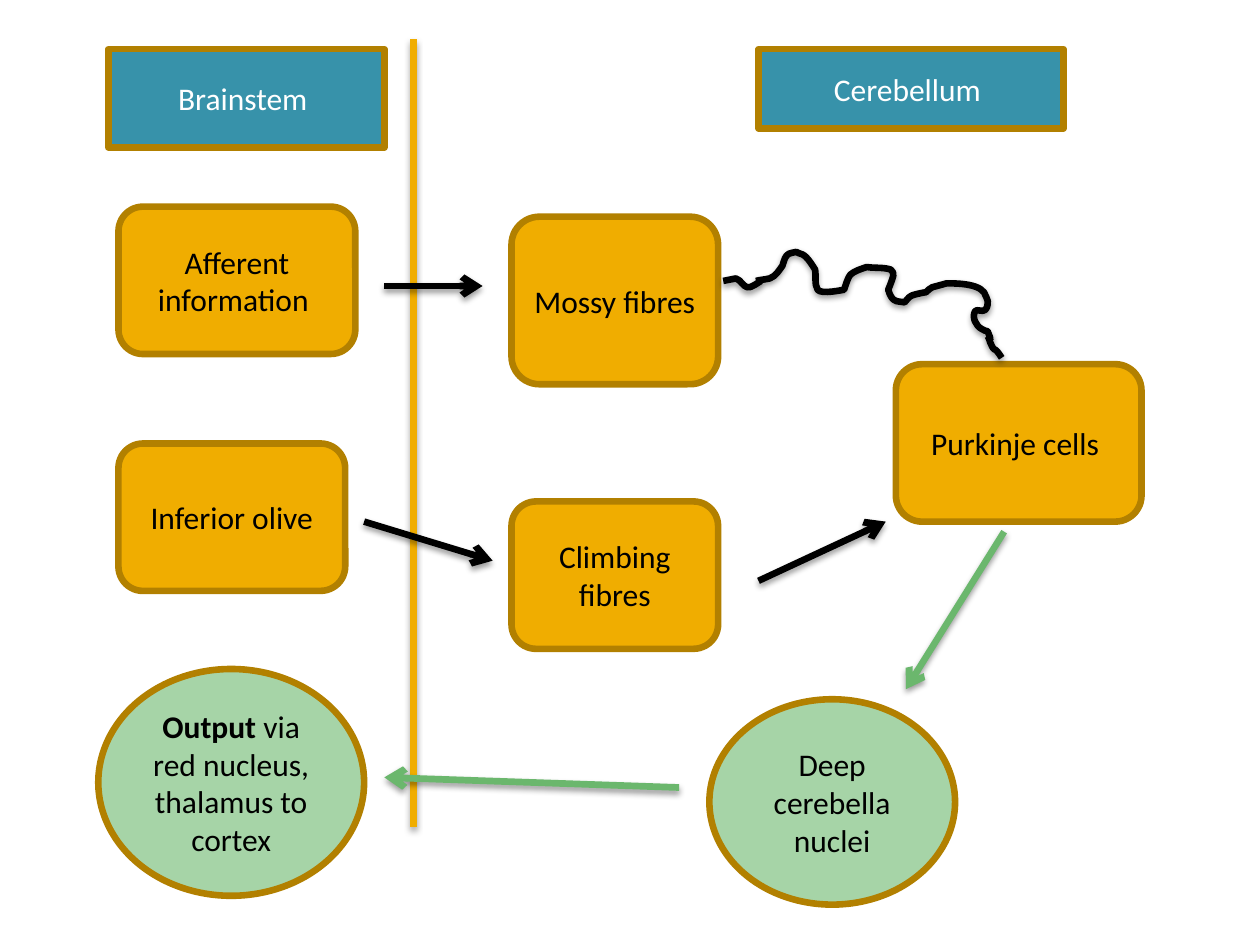
from lxml import etree
from pptx import Presentation
from pptx.dml.color import RGBColor
from pptx.enum.shapes import MSO_CONNECTOR, MSO_SHAPE
from pptx.enum.text import MSO_ANCHOR, PP_ALIGN
from pptx.oxml.ns import qn
from pptx.util import Inches, Pt

RECTANGLE = MSO_SHAPE.RECTANGLE
ROUNDED = MSO_SHAPE.ROUNDED_RECTANGLE
OVAL = MSO_SHAPE.OVAL
STRAIGHT = MSO_CONNECTOR.STRAIGHT
CENTER = PP_ALIGN.CENTER
MIDDLE = MSO_ANCHOR.MIDDLE

COLORS = {
    "amber": "F0AD00",
    "border": "B28000",
    "teal": "3792AA",
    "mint": "A6D4A7",
    "green": "6BB76D",
    "black": "000000",
    "white": "FFFFFF",
}
FONT = "Calibri"
LINE_WIDTH = 3.78

HEADERS = [
    ("Brainstem ", (0.86, 0.39, 2.19, 0.78)),
    ("Cerebellum ", (6.02, 0.39, 2.42, 0.63)),
]
CELLS = [
    ("Afferent information ", (0.94, 1.64, 1.88, 1.17)),
    ("Mossy fibres", (4.06, 1.72, 1.64, 1.33)),
    ("Climbing fibres", (4.06, 3.98, 1.64, 1.17)),
    ("Purkinje cells ", (7.11, 2.89, 1.95, 1.25)),
    ("Inferior olive", (0.94, 3.52, 1.8, 1.17)),
]
MOSSY_ARROW = ((3.05, 2.27), (3.83, 2.27))
CLIMBING_ARROWS = [
    ((2.89, 4.14), (3.91, 4.45)),
    ((6.02, 4.61), (7.03, 4.14)),
]
MOSSY_FIBRE_CURVES = [
    [(6, 2.23),
     (6.04, 2.22), (6.07, 2.22), (6.11, 2.21), (6.16, 2.19), (6.18, 2.15), (6.21, 2.11),
     (6.22, 2.09), (6.22, 2.07), (6.23, 2.05), (6.25, 2.01), (6.27, 2.01), (6.32, 2),
     (6.33, 2.01), (6.35, 2.01), (6.37, 2.02), (6.41, 2.04), (6.45, 2.11), (6.47, 2.14),
     (6.48, 2.19), (6.46, 2.25), (6.49, 2.3), (6.52, 2.34), (6.69, 2.3), (6.7, 2.3),
     (6.71, 2.27), (6.73, 2.2), (6.75, 2.18), (6.78, 2.15), (6.85, 2.13), (6.88, 2.12),
     (6.94, 2.13), (7.01, 2.12), (7.07, 2.14), (7.09, 2.15), (7.09, 2.17), (7.09, 2.19),
     (7.08, 2.23), (7.05, 2.3), (7.05, 2.3), (7.06, 2.32), (7.06, 2.34), (7.07, 2.35),
     (7.1, 2.4), (7.12, 2.39), (7.18, 2.4), (7.19, 2.39), (7.21, 2.36), (7.23, 2.35),
     (7.24, 2.34), (7.34, 2.32), (7.35, 2.32), (7.37, 2.3), (7.38, 2.29), (7.4, 2.28),
     (7.44, 2.27), (7.51, 2.25), (7.51, 2.25), (7.53, 2.25), (7.75, 2.24), (7.81, 2.32),
     (7.82, 2.34), (7.83, 2.36), (7.84, 2.39), (7.84, 2.41), (7.84, 2.44), (7.82, 2.46),
     (7.8, 2.48), (7.75, 2.45), (7.74, 2.47), (7.71, 2.52), (7.75, 2.59), (7.79, 2.61),
     (7.81, 2.62), (7.82, 2.63), (7.84, 2.63), (7.86, 2.69), (7.86, 2.67), (7.86, 2.7)],
    [(6.04, 2.23),
     (6.02, 2.24), (5.96, 2.29), (5.93, 2.28), (5.91, 2.28), (5.91, 2.26), (5.89, 2.25),
     (5.88, 2.23), (5.86, 2.22), (5.84, 2.21), (5.74, 2.23)],
    [(7.84, 2.67),
     (7.85, 2.68), (7.85, 2.7), (7.86, 2.72), (7.9, 2.81), (7.88, 2.74), (7.93, 2.81),
     (7.94, 2.82), (7.94, 2.83), (7.95, 2.84)],
]


def rgb(name):
    return RGBColor.from_string(COLORS[name])


def style_line(shape, color, width=LINE_WIDTH):
    shape.line.color.rgb = rgb(color)
    shape.line.width = Pt(width)


def add_shadow(shape):
    properties = shape._element.spPr
    effects = etree.SubElement(properties, qn("a:effectLst"))
    shadow = etree.SubElement(
        effects, qn("a:outerShdw"), blurRad=str(Pt(3.5)), dist=str(Pt(2)),
        dir="5400000", rotWithShape="0")
    color = etree.SubElement(shadow, qn("a:srgbClr"), val=COLORS["black"])
    etree.SubElement(color, qn("a:alpha"), val="38000")


def add_node(slide, kind, box, runs, fill, text_color="black"):
    shape = slide.shapes.add_shape(kind, *(Inches(value) for value in box))
    shape.shadow.inherit = False
    shape.fill.solid()
    shape.fill.fore_color.rgb = rgb(fill)
    style_line(shape, "border")
    frame = shape.text_frame
    frame.word_wrap = True
    frame.vertical_anchor = MIDDLE
    paragraph = frame.paragraphs[0]
    paragraph.alignment = CENTER
    for text, bold in runs:
        run = paragraph.add_run()
        run.text = text
        run.font.name = FONT
        run.font.size = Pt(18)
        run.font.bold = bold
        run.font.color.rgb = rgb(text_color)


def add_line(slide, start, end, color, arrow=True, width=LINE_WIDTH):
    line = slide.shapes.add_connector(
        STRAIGHT, *(Inches(value) for value in (*start, *end)))
    style_line(line, color, width)
    if arrow:
        etree.SubElement(line.line._get_or_add_ln(), qn("a:tailEnd"), type="arrow")
    add_shadow(line)


def bend_segments(curve):
    outline = next(curve._element.iter(qn("a:moveTo"))).getparent()
    segments = outline.findall(qn("a:lnTo"))
    for index in range(0, len(segments) // 3 * 3, 3):
        bezier = etree.Element(qn("a:cubicBezTo"))
        segments[index].addprevious(bezier)
        for segment in segments[index:index + 3]:
            bezier.append(segment[0])
            outline.remove(segment)


def add_curve(slide, points):
    start, *controls = [(Inches(x), Inches(y)) for x, y in points]
    builder = slide.shapes.build_freeform(*start)
    builder.add_line_segments(controls, close=False)
    curve = builder.convert_to_shape()
    bend_segments(curve)
    curve.fill.background()
    style_line(curve, "black")
    add_shadow(curve)


def add_cells(slide):
    for text, box in CELLS:
        add_node(slide, ROUNDED, box, [(text, False)], "amber")


def add_regions(slide):
    add_line(slide, (3.28, 0.31), (3.28, 6.56), "amber", arrow=False, width=3.82)
    for text, box in HEADERS:
        add_node(slide, RECTANGLE, box, [(text, False)], "teal", "white")


def add_input_pathway(slide):
    add_line(slide, *MOSSY_ARROW, "black")
    for points in MOSSY_FIBRE_CURVES:
        add_curve(slide, points)
    for start, end in CLIMBING_ARROWS:
        add_line(slide, start, end, "black")


def add_output_pathway(slide):
    add_node(slide, OVAL, (0.78, 5.31, 2.11, 1.8),
             [("Output", True), (" via red nucleus, thalamus to cortex", False)], "mint")
    add_line(slide, (7.97, 4.22), (7.19, 5.47), "green")
    add_node(slide, OVAL, (5.63, 5.55, 1.95, 1.63),
             [("Deep cerebella nuclei", False)], "mint")
    add_line(slide, (5.39, 6.25), (3.05, 6.17), "green", width=3.82)


def main():
    presentation = Presentation()
    presentation.slide_width = Inches(10)
    presentation.slide_height = Inches(7.5)
    slide = presentation.slides.add_slide(presentation.slide_layouts[6])
    add_cells(slide)
    add_regions(slide)
    add_input_pathway(slide)
    add_output_pathway(slide)
    presentation.save("out.pptx")


if __name__ == "__main__":
    main()
